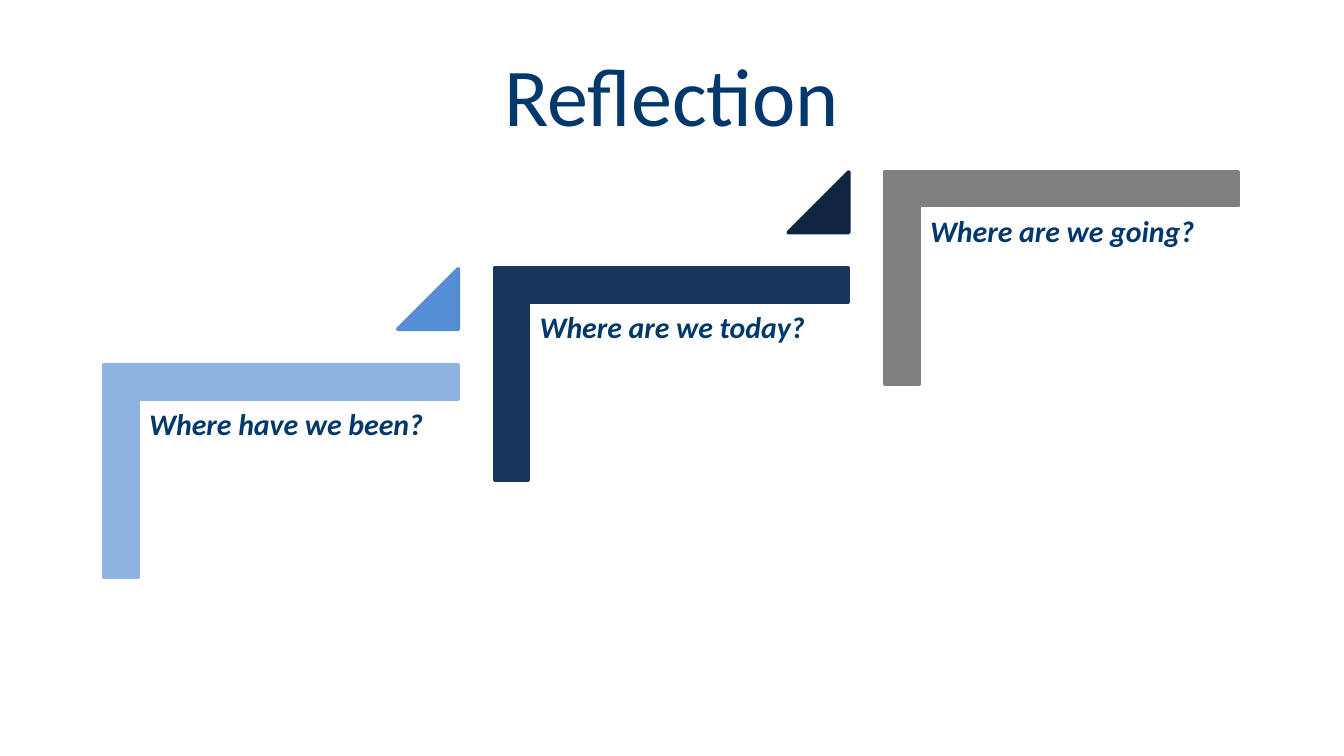
from pptx import Presentation
from pptx.dml.color import RGBColor
from pptx.enum.shapes import MSO_SHAPE
from pptx.enum.text import MSO_ANCHOR, PP_ALIGN
from pptx.util import Pt

PX = 4572
COLORS = {
    "text": "00386B",
    "past": "8DB3E2",
    "past_arrow": "548DD4",
    "today": "17365D",
    "today_arrow": "0F243E",
    "future": "7F7F7F",
}
STEPS = [
    ("Where have we been?", "past", "past_arrow"),
    ("Where are we today?", "today", "today_arrow"),
    ("Where are we going?", "future", None),
]


def px(*values):
    return [v * PX for v in values]


def add_run(p, text, size, bold=False, italic=False):
    r = p.add_run()
    r.text = text
    r.font.name = "Calibri"
    r.font.size = Pt(size)
    r.font.bold = bold
    r.font.italic = italic
    r.font.color.rgb = RGBColor.from_string(COLORS["text"])


def add_block(s, kind, x, y, w, h, color):
    sp = s.shapes.add_shape(kind, *px(x, y, w, h))
    sp.shadow.inherit = False
    rgb = RGBColor.from_string(COLORS[color])
    sp.fill.solid()
    sp.fill.fore_color.rgb = rgb
    sp.line.color.rgb = rgb
    sp.line.width = Pt(2)
    return sp


def add_title(s, x, y, w, h):
    sp = s.shapes.title
    sp.left, sp.top, sp.width, sp.height = px(x, y, w, h)
    tf = sp.text_frame
    tf.vertical_anchor = MSO_ANCHOR.MIDDLE
    p = tf.paragraphs[0]
    p.alignment = PP_ALIGN.CENTER
    add_run(p, "Reflection", 44)


def add_step(s, x, y, w, h, text, color, arrow):
    shift = (w - h) // 2
    corner = add_block(s, MSO_SHAPE.CORNER, x + shift, y - shift, h, w, color)
    corner.rotation = 90
    corner.adjustments[0] = corner.adjustments[1] = 0.16

    sp = s.shapes.add_textbox(*px(x + 53, y + 53, w - 52, h + 100))
    tf = sp.text_frame
    tf.word_wrap = True
    tf.margin_left = tf.margin_right = tf.margin_top = tf.margin_bottom = 14 * PX
    p = tf.paragraphs[0]
    p.line_spacing = 0.9
    add_run(p, text, 16, bold=True, italic=True)

    if arrow:
        sp = add_block(s, MSO_SHAPE.ISOSCELES_TRIANGLE, x + w - 89, y - 143, 90, 90, arrow)
        sp.adjustments[0] = 1


def main():
    prs = Presentation()
    prs.slide_width, prs.slide_height = px(2000, 1125)
    s = prs.slides.add_slide(prs.slide_layouts[5])
    add_title(s, 100, 46, 1800, 188)
    for i, step in enumerate(STEPS):
        add_step(s, 155 + 581 * i, 543 - 144 * i, 526, 316, *step)
    prs.save("out.pptx")


if __name__ == "__main__":
    main()
